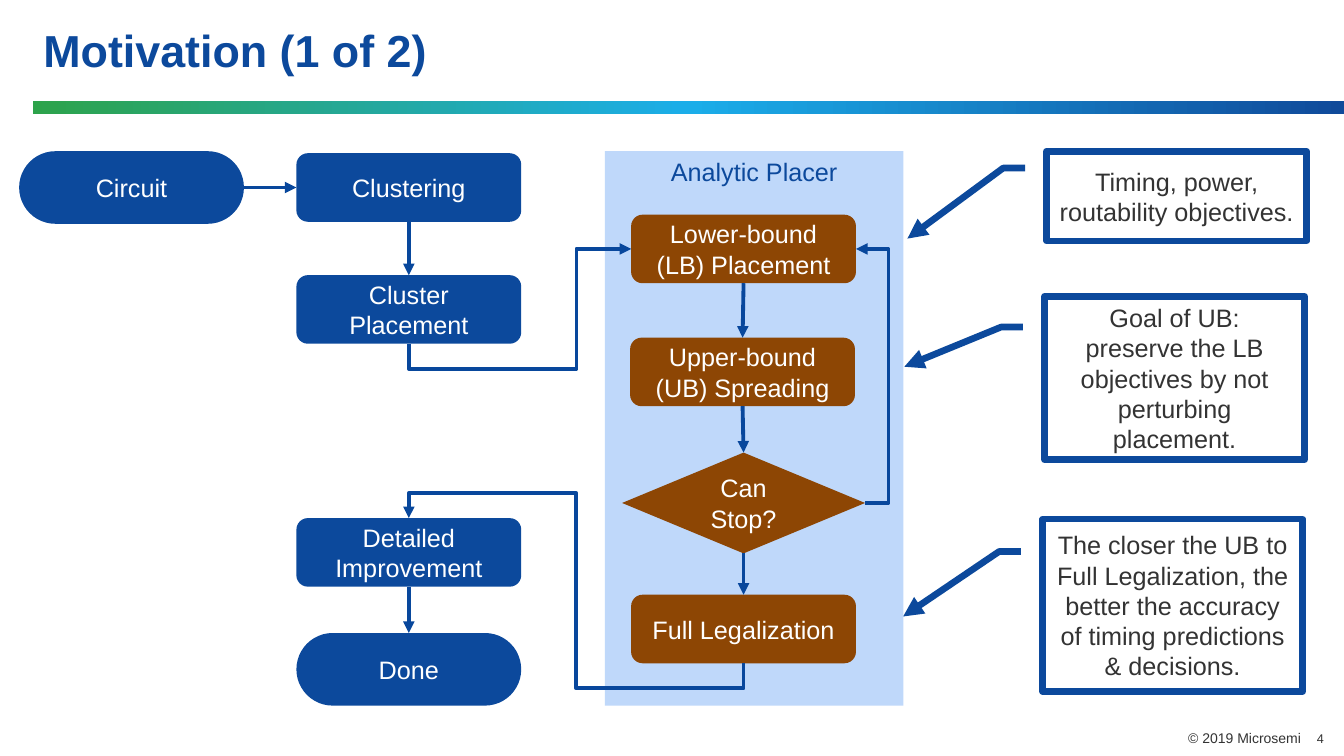
import copy
from dataclasses import dataclass

import pptx
import pptx.dml.color
import pptx.enum.shapes
import pptx.enum.text
import pptx.oxml
import pptx.oxml.ns
import pptx.util
from pptx.util import Inches

SHAPE = pptx.enum.shapes.MSO_SHAPE
CONNECTOR = pptx.enum.shapes.MSO_CONNECTOR
ALIGN = pptx.enum.text.PP_ALIGN
ANCHOR = pptx.enum.text.MSO_ANCHOR
qn = pptx.oxml.ns.qn
TOP, LEFT, BOTTOM, RIGHT = range(4)


@dataclass(frozen=True)
class Theme:
    font: str = "Arial"
    blue: str = "0C499C"
    line: str = "08479C"
    brown: str = "8D4604"
    panel: str = "BFD8FA"
    white: str = "FFFFFF"
    text: str = "333333"
    band: tuple = ("2DA34B", "1BADE9", "104A9A")
    title_size: float = 32
    body_size: float = 18
    copyright_size: float = 10
    number_size: float = 9
    flow_width: float = 2.75
    callout_width: float = 4.75


def rgb(value):
    return pptx.dml.color.RGBColor.from_string(value)


def xml(tag, **attrs):
    el = pptx.oxml.parse_xml(f"<a:{tag} {pptx.oxml.ns.nsdecls('a')}/>")
    for key, value in attrs.items():
        el.set(key, value)
    return el


class FlowSlide:
    def __init__(self, prs, theme):
        self.theme = theme
        self.s = prs.slides.add_slide(prs.slide_layouts[5])

    def label(self, sp, text, size, color, align=ALIGN.CENTER, anchor=ANCHOR.MIDDLE, bold=False):
        tf = sp.text_frame
        tf.word_wrap = True
        tf.vertical_anchor = anchor
        tf.text = text
        for p in tf.paragraphs:
            p.alignment = align
            for r in p.runs:
                r.font.name = self.theme.font
                r.font.size = pptx.util.Pt(size)
                r.font.bold = bold
                r.font.color.rgb = rgb(color)
        return tf

    def title(self, text, box):
        sp = self.s.shapes.title
        sp.left, sp.top, sp.width, sp.height = map(Inches, box)
        tf = self.label(sp, text, self.theme.title_size, self.theme.blue, ALIGN.LEFT, bold=True)
        tf.margin_bottom = 0
        tf.paragraphs[0].line_spacing = 0.9

    def shape(self, kind, box, fill):
        sp = self.s.shapes.add_shape(kind, *map(Inches, box))
        sp.shadow.inherit = False
        sp.fill.solid()
        sp.fill.fore_color.rgb = rgb(fill)
        sp.line.fill.background()
        return sp

    def band(self, box):
        sp = self.shape(SHAPE.RECTANGLE, box, self.theme.white)
        sp.fill.gradient()
        sp.fill.gradient_angle = 0
        first = sp._element.spPr.find(".//" + qn("a:gs"))
        first.addnext(copy.deepcopy(first))
        for i, (stop, color) in enumerate(zip(sp.fill.gradient_stops, self.theme.band)):
            stop.position = i / 2
            stop.color.rgb = rgb(color)

    def node(self, kind, box, text, fill, color=None, anchor=ANCHOR.MIDDLE):
        sp = self.shape(kind, box, fill)
        self.label(sp, text, self.theme.body_size, color or self.theme.white, anchor=anchor)
        return sp

    def footer(self, text, box, size):
        sp = self.s.shapes.add_textbox(*map(Inches, box))
        self.label(sp, text, size, self.theme.text, ALIGN.RIGHT, ANCHOR.TOP)

    def stroke(self, sp, color, width):
        sp.line.color.rgb = rgb(color)
        sp.line.width = pptx.util.Pt(width)
        sp._element.spPr.find(qn("a:ln")).append(xml("tailEnd", type="triangle"))

    def arrow(self, start, start_side, end, end_side, kind=CONNECTOR.STRAIGHT):
        c = self.s.shapes.add_connector(kind, 0, 0, 0, 0)
        c.begin_connect(start, start_side)
        c.end_connect(end, end_side)
        self.stroke(c, self.theme.line, self.theme.flow_width)
        c._element.spPr.append(xml("effectLst"))
        return c

    def elbow(self, start, start_side, end, end_side, preset, adjust, turned, flips):
        c = self.arrow(start, start_side, end, end_side, CONNECTOR.ELBOW)
        # A quarter turn swaps the sides of the frame around its centre
        mid_x, mid_y = (c.begin_x + c.end_x) // 2, (c.begin_y + c.end_y) // 2
        w, h = abs(c.end_x - c.begin_x), abs(c.end_y - c.begin_y)
        if turned:
            w, h = h, w
        c.left, c.top, c.width, c.height = mid_x - w // 2, mid_y - h // 2, w, h
        xfrm = c._element.spPr.find(qn("a:xfrm"))
        xfrm.set("rot", "5400000" if turned else "0")
        for axis in "HV":
            xfrm.set("flip" + axis, "1" if axis in flips else "0")
        geom = c._element.spPr.find(qn("a:prstGeom"))
        geom.set("prst", preset)
        for i, value in enumerate(adjust, 1):
            guide = xml("gd", name=f"adj{i}", fmla=f"val {round(value * 100000)}")
            geom.find(qn("a:avLst")).append(guide)

    def callout(self, box, text, tip):
        sp = self.node(SHAPE.LINE_CALLOUT_2, box, text, self.theme.white, self.theme.text)
        for i, value in enumerate((0.188, -0.083, 0.188, -0.167, *tip)):
            sp.adjustments[i] = value
        self.stroke(sp, self.theme.blue, self.theme.callout_width)


def main():
    prs = pptx.Presentation()
    prs.slide_width, prs.slide_height = Inches(13.33), Inches(7.5)
    theme = Theme()
    slide = FlowSlide(prs, theme)

    # Heading and footer
    slide.band((0.33, 1, 13, 0.13))
    slide.title("Motivation (1 of 2)", (0.33, 0, 12.67, 1))
    slide.footer("4", (10.9, 7.2, 2.33, 0.4), theme.number_size)
    slide.footer("© 2019 Microsemi", (8.94, 7.19, 4.06, 0.27), theme.copyright_size)

    # Placer panel
    slide.node(SHAPE.RECTANGLE, (6, 1.5, 2.96, 5.5), "Analytic Placer",
               theme.panel, theme.blue, ANCHOR.TOP)

    # Flow steps
    def step(x, y, text, fill):
        return slide.node(SHAPE.FLOWCHART_ALTERNATE_PROCESS, (x, y, 2.23, 0.68), text, fill)

    def terminal(x, y, text):
        return slide.node(SHAPE.FLOWCHART_TERMINATOR, (x, y, 2.23, 0.72), text, theme.blue)

    circuit = terminal(0.19, 1.5, "Circuit")
    clustering = step(2.94, 1.52, "Clustering", theme.blue)
    cluster_placement = step(2.94, 2.73, "Cluster Placement", theme.blue)
    improvement = step(2.94, 5.14, "Detailed Improvement", theme.blue)
    done = terminal(2.94, 6.28, "Done")
    lower = step(6.26, 2.13, "Lower-bound (LB) Placement", theme.brown)
    upper = step(6.25, 3.35, "Upper-bound (UB) Spreading", theme.brown)
    can_stop = slide.node(SHAPE.FLOWCHART_DECISION, (6.17, 4.49, 2.41, 1),
                          "Can Stop?", theme.brown)
    legalization = step(6.26, 5.9, "Full Legalization", theme.brown)

    # Straight arrows
    slide.arrow(circuit, RIGHT, clustering, LEFT)
    for start, end in ((clustering, cluster_placement), (lower, upper), (upper, can_stop),
                       (can_stop, legalization), (improvement, done)):
        slide.arrow(start, BOTTOM, end, TOP)

    # Bent arrows
    slide.elbow(cluster_placement, BOTTOM, lower, LEFT,
                "bentConnector4", (-0.266, 0.754), True, "HV")
    slide.elbow(can_stop, RIGHT, lower, RIGHT,
                "bentConnector3", (-2.579,), False, "HV")
    slide.elbow(legalization, BOTTOM, improvement, TOP,
                "bentConnector5", (-0.173, 0.5, 1.173), True, "H")

    # Callouts
    slide.callout((10.38, 1.5, 2.58, 0.89), "Timing, power, routability objectives.",
                  (0.974, -0.535))
    slide.callout((10.36, 2.94, 2.58, 1.62),
                  "Goal of UB:\npreserve the LB objectives by not perturbing placement.",
                  (0.431, -0.539))
    slide.callout((10.34, 5.15, 2.58, 1.71),
                  "The closer the UB to Full Legalization, the better the accuracy "
                  "of timing predictions & decisions.", (0.565, -0.536))

    prs.save("out.pptx")


if __name__ == "__main__":
    main()
